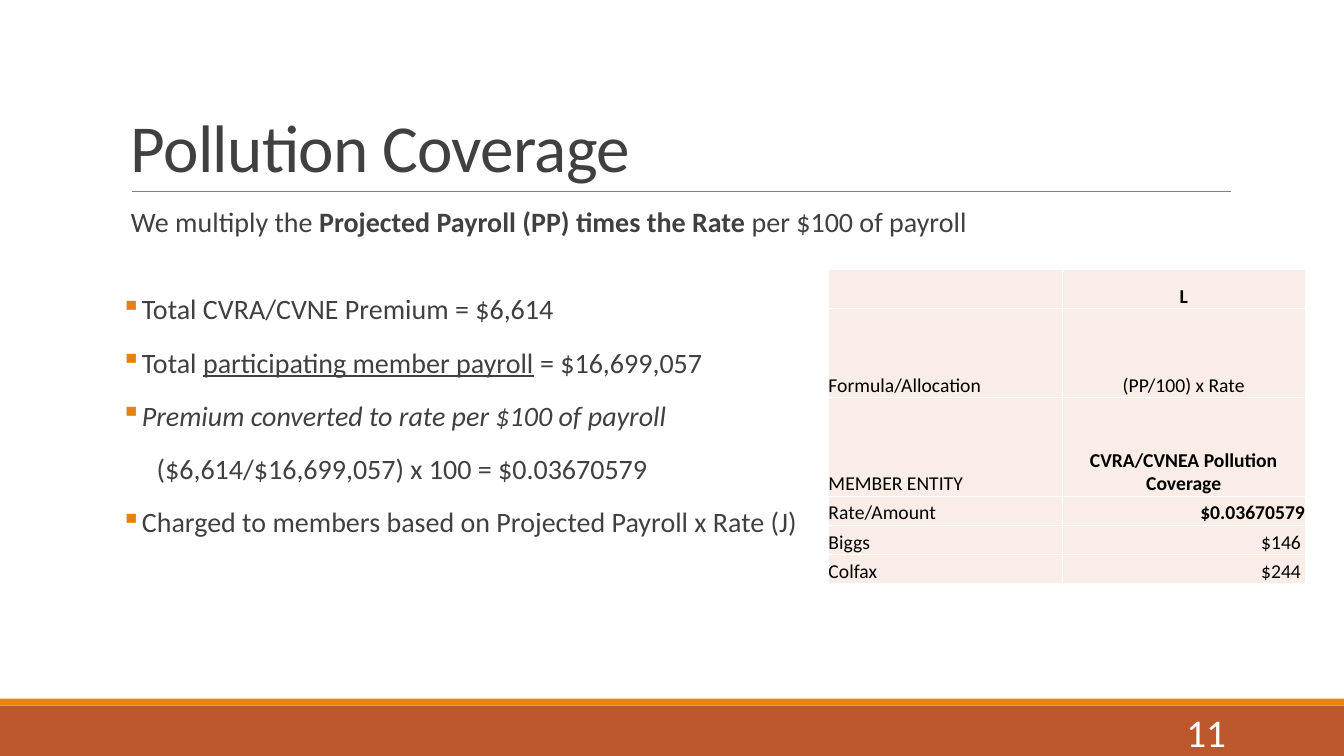
"""Builds the Pollution Coverage slide with its rate calculation and member table."""
from lxml import etree
from pptx import Presentation
from pptx.dml.color import RGBColor
from pptx.enum.shapes import MSO_CONNECTOR, MSO_SHAPE
from pptx.enum.text import MSO_ANCHOR, PP_ALIGN
from pptx.oxml.ns import qn
from pptx.util import Pt

WHITE = RGBColor(0xFF, 0xFF, 0xFF)
BLACK = RGBColor(0x00, 0x00, 0x00)
CHARCOAL = RGBColor(0x40, 0x40, 0x40)
GRAY = RGBColor(0x80, 0x80, 0x80)
ORANGE = RGBColor(0xE4, 0x83, 0x12)
RUST = RGBColor(0xBD, 0x58, 0x2C)
BLUSH = RGBColor(0xFA, 0xED, 0xE7)
LEFT, CENTER, RIGHT = PP_ALIGN.LEFT, PP_ALIGN.CENTER, PP_ALIGN.RIGHT
TOP, MIDDLE, BOTTOM = MSO_ANCHOR.TOP, MSO_ANCHOR.MIDDLE, MSO_ANCHOR.BOTTOM
RECTANGLE, STRAIGHT = MSO_SHAPE.RECTANGLE, MSO_CONNECTOR.STRAIGHT


class Deck:
    def __init__(self, width, height, font):
        self.presentation = Presentation()
        self.presentation.slide_width = Pt(width)
        self.presentation.slide_height = Pt(height)
        self.slide = self.presentation.slides.add_slide(self.presentation.slide_layouts[6])
        self.shapes = self.slide.shapes
        self.font = font

    def band(self, left, top, width, height, color):
        band = self.shapes.add_shape(RECTANGLE, Pt(left), Pt(top), Pt(width), Pt(height))
        band.shadow.inherit = False
        band.fill.solid()
        band.fill.fore_color.rgb = color
        band.line.fill.background()

    def rule(self, left, right, y, color, weight):
        rule = self.shapes.add_connector(STRAIGHT, Pt(left), Pt(y), Pt(right), Pt(y))
        rule.line.color.rgb = color
        rule.line.width = Pt(weight)
        etree.SubElement(rule._element.spPr, qn("a:effectLst"))

    def frame(self, left, top, width, height, anchor, side_inset=7.2):
        frame = self.shapes.add_textbox(Pt(left), Pt(top), Pt(width), Pt(height)).text_frame
        frame.word_wrap = True
        frame.vertical_anchor = anchor
        frame.margin_left = frame.margin_right = Pt(side_inset)
        return frame

    def run(self, paragraph, text, size, color, bold=False, italic=False, underline=False):
        run = paragraph.add_run()
        run.text = text
        run.font.name = self.font
        run.font.size = Pt(size)
        run.font.color.rgb = color
        run.font.bold, run.font.italic, run.font.underline = bold, italic, underline
        return run

    def bullet(self, paragraph, indent, symbol, color):
        properties = paragraph._p.get_or_add_pPr()
        properties.set("marL", str(Pt(indent)))
        properties.set("indent", str(Pt(-indent if symbol else 0)))
        if symbol:
            tint = etree.SubElement(properties, qn("a:buClr"))
            etree.SubElement(tint, qn("a:srgbClr"), val=str(color))
            etree.SubElement(properties, qn("a:buChar"), char=symbol)
        else:
            etree.SubElement(properties, qn("a:buNone"))

    def cell(self, cell, text, size, align, bold, right_inset):
        cell.margin_left = cell.margin_top = cell.margin_bottom = 0
        cell.margin_right = Pt(right_inset)
        cell.vertical_anchor = BOTTOM
        paragraph = cell.text_frame.paragraphs[0]
        paragraph.alignment = align
        if text:
            self.run(paragraph, text, size, BLACK, bold)
        for side in ("a:lnL", "a:lnR", "a:lnT", "a:lnB"):
            border = etree.SubElement(cell._tc.get_or_add_tcPr(), qn(side), w=str(Pt(1)))
            paint = etree.SubElement(border, qn("a:solidFill"))
            etree.SubElement(paint, qn("a:srgbClr"), val=str(WHITE))
        cell.fill.solid()
        cell.fill.fore_color.rgb = BLUSH

    def table(self, left, top, widths, heights, rows, size):
        table = self.shapes.add_table(len(heights), len(widths), Pt(left), Pt(top),
                                      Pt(sum(widths)), Pt(sum(heights))).table
        table.first_row = table.horz_banding = False
        for column, width in zip(table.columns, widths):
            column.width = Pt(width)
        for row, height, (label, value, align, bold, inset) in zip(table.rows, heights, rows):
            row.height = Pt(height)
            self.cell(row.cells[0], label, size, LEFT, False, 0)
            self.cell(row.cells[1], value, size, align, bold, inset)


BULLET = "▪"
STEPS = [
    (7.2, None, 0.9, 26, [("We multiply the ", {}),
                          ("Projected Payroll (PP) times the Rate ", {"bold": True}),
                          ("per $100 of payroll", {})]),
    (11.7, BULLET, 1, 2, [("Total CVRA/CVNE Premium = $6,614", {})]),
    (11.7, BULLET, 1, 2, [("Total ", {}),
                          ("participating member payroll", {"underline": True}),
                          (" = $16,699,057", {})]),
    (11.7, BULLET, 1, 2, [("Premium converted to rate per $100 of payroll", {"italic": True})]),
    (25.5, None, 1, 2, [("($6,614/$16,699,057) x 100 = $0.03670579", {})]),
    (11.7, BULLET, 1, 2, [("Charged to members based on Projected Payroll x Rate (J)", {})]),
]
ALLOCATION = [
    ("", "L", CENTER, True, 0),
    ("Formula/Allocation", "(PP/100) x Rate", CENTER, False, 0),
    ("MEMBER ENTITY", "CVRA/CVNEA Pollution Coverage", CENTER, True, 0),
    ("Rate/Amount", "$0.03670579", RIGHT, True, 0),
    ("Biggs", "$146", RIGHT, False, 3),
    ("Colfax", "$244", RIGHT, False, 3),
]


def main():
    deck = Deck(960, 540, "Calibri")
    deck.band(0, 504, 960, 36, RUST)
    deck.band(0, 499, 960, 5, ORANGE)
    deck.rule(94.3, 879, 136.8, GRAY, 0.5)

    title = deck.frame(86.4, 22.5, 792, 114.3, BOTTOM).paragraphs[0]
    title.line_spacing = 0.85
    heading = deck.run(title, "Pollution Coverage", 48, CHARCOAL)
    heading.font._element.set("spc", "-50")

    body = deck.frame(86.4, 145.4, 792, 328.3, TOP, 0)
    for index, (indent, symbol, spacing, after, pieces) in enumerate(STEPS):
        step = body.add_paragraph() if index else body.paragraphs[0]
        step.line_spacing = spacing
        step.space_before = Pt(12 if index else 0)
        step.space_after = Pt(after)
        deck.bullet(step, indent, symbol, ORANGE)
        for text, emphasis in pieces:
            deck.run(step, text, 20, CHARCOAL, **emphasis)

    deck.table(591.8, 192.4, [167, 173.5], [28, 63.5, 70.5, 20.8, 20.8, 20.8], ALLOCATION, 14)

    page_number = deck.frame(779.8, 508.3, 103, 28.8, MIDDLE).paragraphs[0]
    page_number.alignment = RIGHT
    deck.run(page_number, "11", 28, WHITE)
    deck.presentation.save("out.pptx")


if __name__ == "__main__":
    main()
